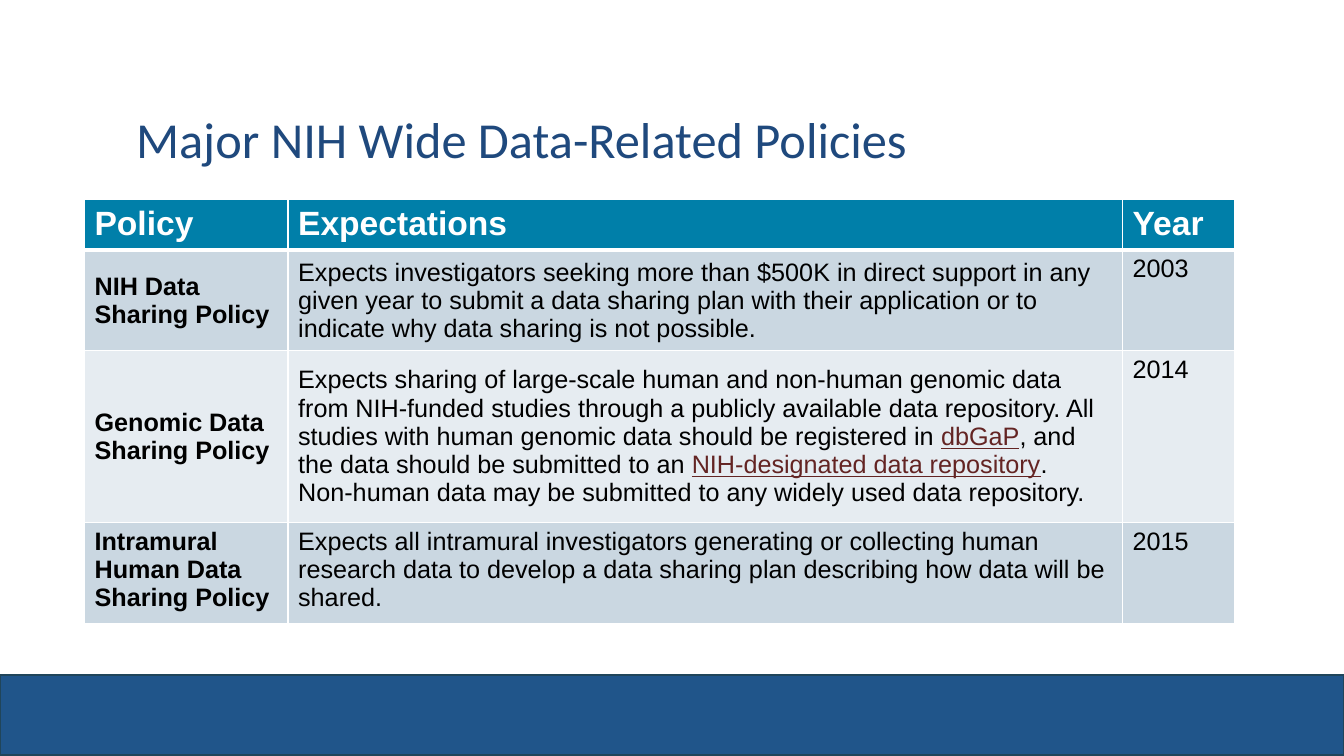
from lxml import etree
from pptx import Presentation
from pptx.dml.color import RGBColor
from pptx.enum import shapes, text
from pptx.oxml import ns
from pptx.util import Cm, Pt

WHITE, BLACK, LINK = "FFFFFF", "000000", "632423"
NAVY, TEAL = "1F497D", "007FA9"
BANDS = ("CAD7E1", "E6ECF1")
COLUMN_WIDTHS = (5.13, 21.03, 2.82)
ROW_HEIGHTS = (1.24, 2.54, 4.32, 2.54)
HEADINGS = ("Policy", "Expectations", "Year")
POLICIES = (
    ("NIH Data Sharing Policy",
     ("Expects investigators seeking more than $500K in direct support in any "
      "given year to submit a data sharing plan with their application or to "
      "indicate why data sharing is not possible.",),
     "2003", True),
    ("Genomic Data Sharing Policy",
     ("Expects sharing of large-scale human and non-human genomic data from "
      "NIH-funded studies through a publicly available data repository. All "
      "studies with human genomic data should be registered in ",
      "dbGaP",
      ", and the data should be submitted to an ",
      "NIH-designated data repository",
      ".  Non-human data may be submitted to any widely used data repository."),
     "2014", True),
    ("Intramural Human Data Sharing Policy",
     ("Expects all intramural investigators generating or collecting human "
      "research data to develop a data sharing plan describing how data will "
      "be shared.",),
     "2015", False),
)


def color(value):
    return RGBColor.from_string(value)


def style_font(font, name, size, value, bold=False):
    font.name = name
    font.size = Pt(size)
    font.bold = bold
    font.color.rgb = color(value)


def add_footer_band(slide, width):
    band = slide.shapes.add_shape(
        shapes.MSO_SHAPE.RECTANGLE, 0, Cm(17.02), width, Cm(2.01))
    band.shadow.inherit = False
    band.fill.solid()
    band.fill.fore_color.rgb = color("20558A")
    band.line.color.rgb = color("20455A")
    band.line.width = Pt(1.5)


def add_title(slide, words):
    frame = slide.shapes.add_textbox(
        Cm(3.18), Cm(1.7), Cm(27.43), Cm(3.76)).text_frame
    frame.word_wrap = True
    frame.vertical_anchor = text.MSO_ANCHOR.MIDDLE
    title = frame.paragraphs[0]
    title.text = words
    title.line_spacing = 0.9
    style_font(title.font, "Calibri", 36, NAVY)


def set_borders(cell, top, bottom):
    properties = cell._tc.get_or_add_tcPr()
    sides = (("lnL", 1), ("lnR", 1), ("lnT", top), ("lnB", bottom))
    for position, (side, width) in enumerate(sides):
        border = etree.Element(ns.qn(f"a:{side}"), w=str(Pt(width)))
        fill = etree.SubElement(border, ns.qn("a:solidFill"))
        etree.SubElement(fill, ns.qn("a:srgbClr"), val=WHITE)
        properties.insert(position, border)


def fill_cell(cell, parts, background, size=18, value=BLACK, bold=False,
              middle=False):
    cell.fill.solid()
    cell.fill.fore_color.rgb = color(background)
    cell.vertical_anchor = (
        text.MSO_ANCHOR.MIDDLE if middle else text.MSO_ANCHOR.TOP)
    paragraph = cell.text_frame.paragraphs[0]
    style_font(paragraph.font, "Arial", size, value, bold)
    for index, part in enumerate(parts):
        run = paragraph.add_run()
        run.text = part
        is_link = index % 2 == 1
        style_font(run.font, "Arial", size, LINK if is_link else value, bold)
        if is_link:
            run.font.underline = True


def add_policy_table(slide):
    table = slide.shapes.add_table(
        len(ROW_HEIGHTS), len(COLUMN_WIDTHS), Cm(2.13), Cm(5.03),
        Cm(sum(COLUMN_WIDTHS)), Cm(sum(ROW_HEIGHTS))).table
    for column, width in zip(table.columns, COLUMN_WIDTHS):
        column.width = Cm(width)
    for row, height in zip(table.rows, ROW_HEIGHTS):
        row.height = Cm(height)
    for cell, heading in zip(table.rows[0].cells, HEADINGS):
        fill_cell(cell, (heading,), TEAL, 24, WHITE, bold=True)
        set_borders(cell, 1, 3)
    for index, (policy, expectations, year, middle) in enumerate(POLICIES):
        cells = table.rows[index + 1].cells
        background = BANDS[index % 2]
        fill_cell(cells[0], (policy,), background, bold=True, middle=middle)
        fill_cell(cells[1], expectations, background, middle=middle)
        fill_cell(cells[2], (year,), background)
        for cell in cells:
            set_borders(cell, 3 if index == 0 else 1, 1)


def main():
    deck = Presentation()
    deck.slide_width, deck.slide_height = Cm(33.87), Cm(19.05)
    slide = deck.slides.add_slide(deck.slide_layouts[6])
    add_footer_band(slide, deck.slide_width)
    add_title(slide, "Major NIH Wide Data-Related Policies")
    add_policy_table(slide)
    deck.save("out.pptx")


if __name__ == "__main__":
    main()
